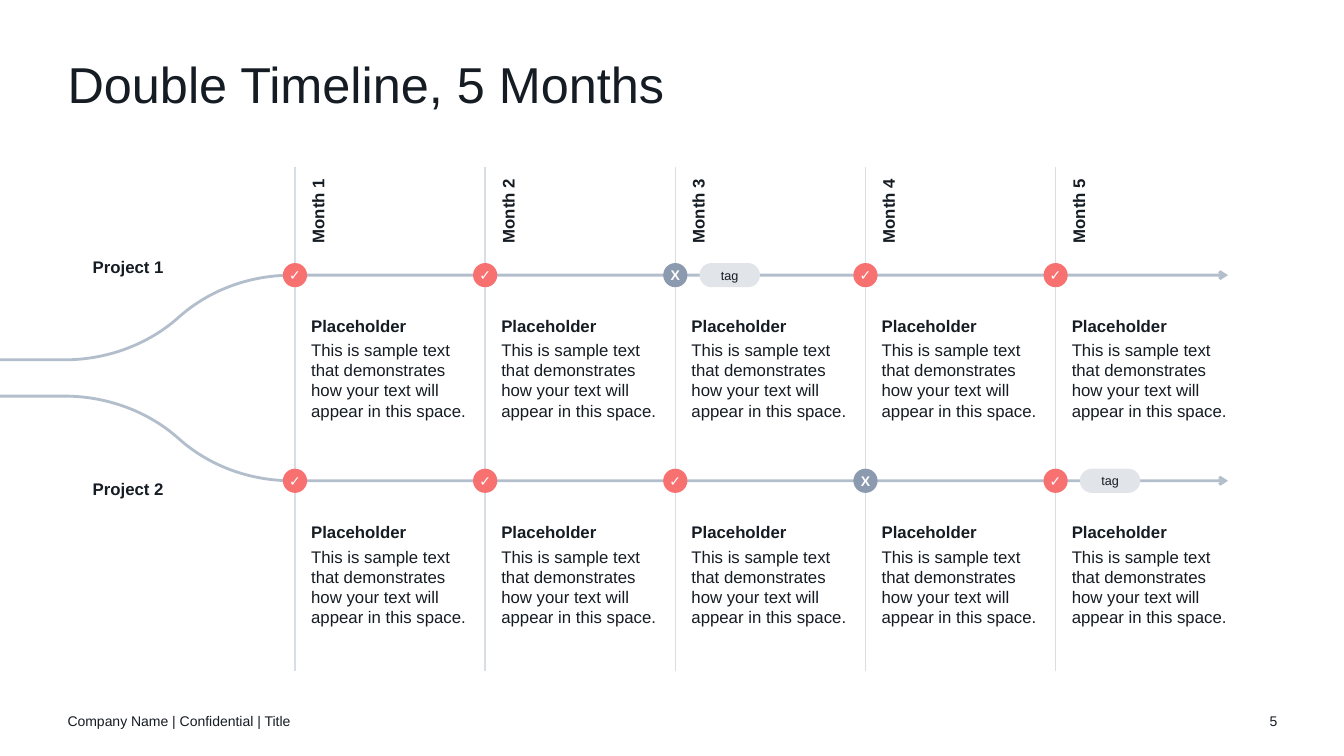
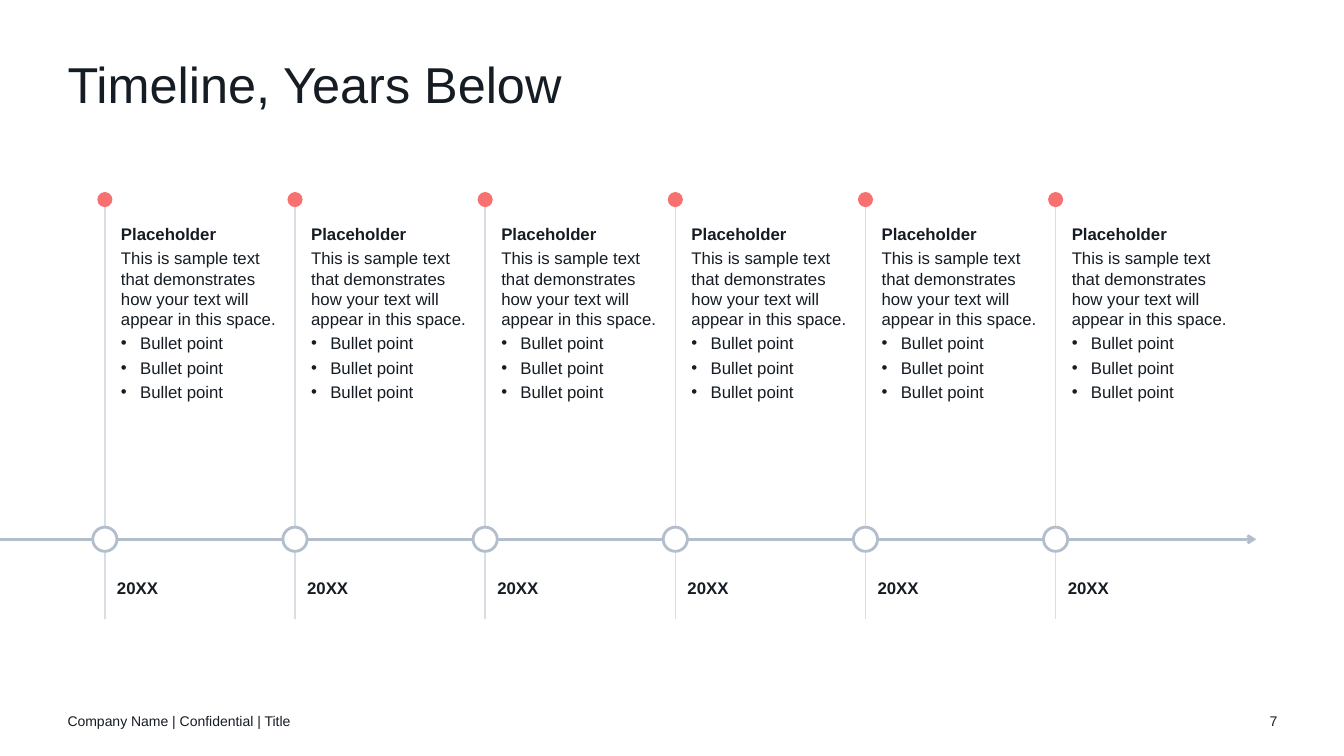
from dataclasses import dataclass

from lxml import etree
from pptx import Presentation
from pptx.dml.color import RGBColor
from pptx.enum.shapes import MSO_CONNECTOR, MSO_SHAPE
from pptx.enum.text import MSO_ANCHOR, PP_ALIGN
from pptx.oxml.ns import qn
from pptx.util import Inches, Pt

FONT = "Arial"
COLORS = {
    "ink": "151C23",
    "white": "FFFFFF",
    "coral": "F87171",
    "slate": "8C9AB0",
    "track": "B3BECC",
    "grid": "D9DEE5",
    "tag": "E1E4E9",
}

FIRST_X, LAST_X = 1.04, 10.47
COLUMNS = [FIRST_X + i * (LAST_X - FIRST_X) / 5 for i in range(6)]
NODE = 0.24
DOT = 0.15
CARD_TEXT = "This is sample text that demonstrates how your text will appear in this space."
BULLETS = ("Bullet point",) * 3
FORK = (
    (0, 0), (0.64, 0),
    (1.06, 0), (1.47, 0.18), (1.77, 0.5),
    (2.07, 0.82), (2.47, 1), (2.9, 1),
    (12.18, 1),
)


@dataclass(frozen=True)
class Para:
    text: str
    size: float = 12
    bold: bool = False
    color: str = "ink"
    align: PP_ALIGN = PP_ALIGN.LEFT
    after: float = 0
    line_spacing: float | None = None
    bullet: bool = False


@dataclass(frozen=True)
class Project:
    name: str
    name_y: float
    entry_y: float
    axis_y: float
    card_y: float
    marks: str
    tag_column: int


PROJECTS = (
    Project("Project 1", 2.55, 3.57, 2.73, 3.13, "✓✓X✓✓", 2),
    Project("Project 2", 4.75, 3.93, 4.77, 5.18, "✓✓✓X✓", 4),
)


def rgb(name: str) -> RGBColor:
    return RGBColor.from_string(COLORS[name])


def write(sp, paras: list[Para], anchor: MSO_ANCHOR) -> None:
    tf = sp.text_frame
    tf.word_wrap = True
    tf.vertical_anchor = anchor
    tf.margin_left = tf.margin_top = tf.margin_right = tf.margin_bottom = 0
    for i, para in enumerate(paras):
        p = tf.add_paragraph() if i else tf.paragraphs[0]
        p.alignment = para.align
        p.space_after = Pt(para.after)
        if para.line_spacing:
            p.line_spacing = para.line_spacing
        if para.bullet:
            pPr = p._p.get_or_add_pPr()
            pPr.set("marL", str(Inches(0.19)))
            pPr.set("indent", str(-Inches(0.19)))
            etree.SubElement(pPr, qn("a:buFont")).set("typeface", FONT)
            etree.SubElement(pPr, qn("a:buChar")).set("char", "•")
        r = p.add_run()
        r.text = para.text
        r.font.name = FONT
        r.font.size = Pt(para.size)
        r.font.bold = para.bold
        r.font.color.rgb = rgb(para.color)


def add_text(s, x: float, y: float, w: float, h: float, *paras: Para,
             anchor: MSO_ANCHOR = MSO_ANCHOR.TOP, rotation: float = 0) -> None:
    sp = s.shapes.add_textbox(Inches(x), Inches(y), Inches(w), Inches(h))
    sp.rotation = rotation
    write(sp, list(paras), anchor)


def style_line(sp, color: str, width: float, arrow: bool = False) -> None:
    sp.line.color.rgb = rgb(color)
    sp.line.width = Pt(width)
    if arrow:
        ln = sp.element.spPr.find(qn("a:ln"))
        etree.SubElement(ln, qn("a:tailEnd")).set("type", "arrow")


def add_line(s, x1: float, y1: float, x2: float, y2: float,
             color: str, width: float, arrow: bool = False) -> None:
    cn = s.shapes.add_connector(MSO_CONNECTOR.STRAIGHT, Inches(x1), Inches(y1),
                                Inches(x2), Inches(y2))
    style_line(cn, color, width, arrow)
    etree.SubElement(cn.element.spPr, qn("a:effectLst"))


def add_filled(s, kind: MSO_SHAPE, x: float, y: float, w: float, h: float,
               fill: str, outline: str | None = None, label: Para | None = None):
    sp = s.shapes.add_shape(kind, Inches(x), Inches(y), Inches(w), Inches(h))
    sp.shadow.inherit = False
    sp.fill.solid()
    sp.fill.fore_color.rgb = rgb(fill)
    if outline:
        style_line(sp, outline, 2)
    else:
        sp.line.fill.background()
    if label:
        write(sp, [label], MSO_ANCHOR.MIDDLE)
    return sp


def add_circle(s, x: float, y: float, size: float, fill: str,
               outline: str | None = None, label: Para | None = None) -> None:
    add_filled(s, MSO_SHAPE.OVAL, x - size / 2, y - size / 2, size, size,
               fill, outline, label)


def add_tag(s, x: float, y: float) -> None:
    sp = add_filled(s, MSO_SHAPE.ROUNDED_RECTANGLE, x, y - NODE / 2, 0.6, NODE, "tag",
                    label=Para("tag", 9, align=PP_ALIGN.CENTER))
    sp.adjustments[0] = 0.5


def add_fork(s, project: Project) -> None:
    drop = project.axis_y - project.entry_y
    points = [(Inches(x), Inches(project.entry_y + share * drop)) for x, share in FORK]
    builder = s.shapes.build_freeform(*points[0])
    builder.add_line_segments(points[1:], close=False)
    sp = builder.convert_to_shape()
    sp.shadow.inherit = False
    sp.fill.background()
    style_line(sp, "track", 2, arrow=True)
    segments = list(sp.element.iter(qn("a:lnTo")))
    for group in (segments[1:4], segments[4:7]):
        curve = etree.Element(qn("a:cubicBezTo"))
        group[0].addprevious(curve)
        for segment in group:
            curve.append(segment[0])
            segment.getparent().remove(segment)


def add_card(s, x: float, y: float, h: float, bullets: tuple[str, ...] = ()) -> None:
    add_text(s, x + 0.16, y, 1.55, h,
             Para("Placeholder", bold=True, after=3),
             Para(CARD_TEXT, after=3),
             *(Para(text, after=3, bullet=True) for text in bullets))


def add_column_label(s, text: str, x: float, y: float, rotation: float = 0) -> None:
    nudge = 0.03 if x == COLUMNS[-1] else 0
    add_text(s, x - nudge, y, 0.75, 0.2, Para(text, bold=True),
             anchor=MSO_ANCHOR.BOTTOM, rotation=rotation)


def new_slide(prs, title: str, number: int):
    s = prs.slides.add_slide(prs.slide_layouts[6])
    s.background.fill.solid()
    s.background.fill.fore_color.rgb = rgb("white")
    add_text(s, 0.67, 0.6, 12, 0.6, Para(title, 36, line_spacing=0.9))
    add_text(s, 0.67, 6.95, 4.5, 0.4, Para("Company Name | Confidential | Title", 10),
             anchor=MSO_ANCHOR.MIDDLE)
    add_text(s, 12.17, 6.95, 0.5, 0.4, Para(str(number), 10, align=PP_ALIGN.RIGHT),
             anchor=MSO_ANCHOR.MIDDLE)
    return s


def build_double_timeline(prs) -> None:
    s = new_slide(prs, "Double Timeline, 5 Months", 5)
    months = COLUMNS[1:]
    for project in PROJECTS:
        add_fork(s, project)
    for i, x in enumerate(months, 1):
        add_line(s, x, 1.66, x, 6.66, "grid", 1)
        add_column_label(s, f"Month {i}", x - 0.15, 1.94, rotation=270)
    for project in PROJECTS:
        add_text(s, 0.92, project.name_y, 1.2, 0.3, Para(project.name, bold=True))
        add_tag(s, months[project.tag_column] + 0.24, project.axis_y)
        for x, mark in zip(months, project.marks):
            add_circle(s, x, project.axis_y, NODE, "coral" if mark == "✓" else "slate",
                       label=Para(mark, 10, True, "white", PP_ALIGN.CENTER))
            add_card(s, x, project.card_y, 1.2)


def build_year_timeline(prs) -> None:
    s = new_slide(prs, "Timeline, Years Below", 7)
    axis_y = 5.35
    add_line(s, 0, axis_y, 12.46, axis_y, "track", 2, arrow=True)
    for x in COLUMNS:
        add_line(s, x, 2.04, x, 6.14, "grid", 1)
        add_circle(s, x, axis_y, NODE, "white", outline="track")
        add_circle(s, x, 1.98, DOT, "coral")
        add_column_label(s, "20XX", x + 0.12, 5.73)
        add_card(s, x, 2.22, 2.5, BULLETS)


def main() -> None:
    prs = Presentation()
    prs.slide_width = Inches(13.33)
    prs.slide_height = Inches(7.5)
    build_double_timeline(prs)
    build_year_timeline(prs)
    prs.save("out.pptx")


if __name__ == "__main__":
    main()
